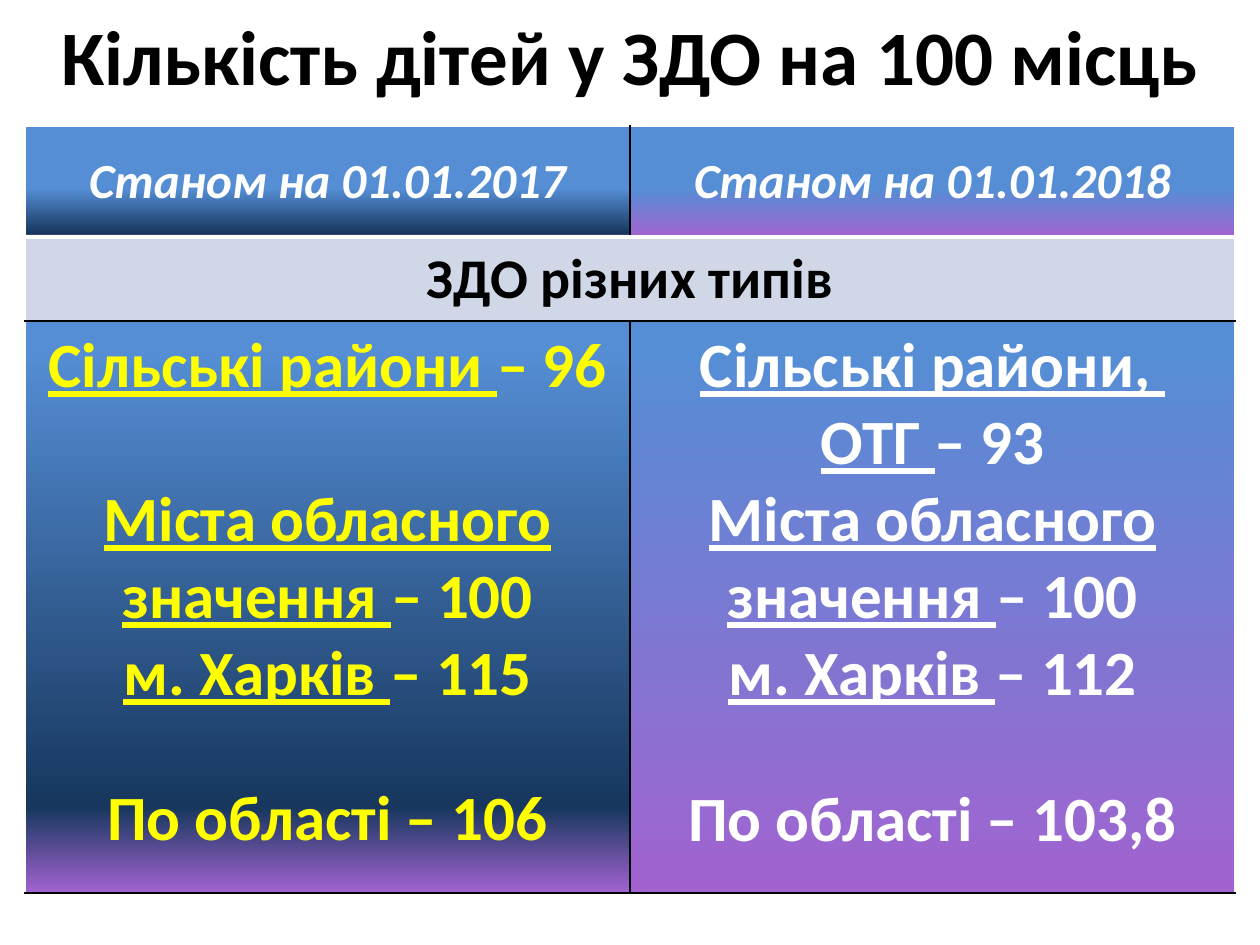
"""Build the slide comparing children per 100 preschool places in 2017 and 2018."""
from dataclasses import dataclass
from typing import NamedTuple

from lxml import etree
from pptx import Presentation
from pptx.dml.color import RGBColor
from pptx.enum.text import MSO_ANCHOR, PP_ALIGN
from pptx.oxml.ns import qn
from pptx.util import Emu, Pt

CENTER = PP_ALIGN.CENTER
MIDDLE, TOP = MSO_ANCHOR.MIDDLE, MSO_ANCHOR.TOP
EMU_PER_PX = 914400 / 126


@dataclass(frozen=True)
class Theme:
    font: str = "Calibri"
    black: str = "000000"
    white: str = "FFFFFF"
    yellow: str = "FFFF00"
    sky: str = "558ED5"
    navy: str = "17375E"
    violet: str = "A263D0"
    band: str = "D0D8E8"
    title_size: int = 44
    header_size: int = 28
    band_size: int = 32
    body_size: int = 36


THEME = Theme()


class Line(NamedTuple):
    label: str = ""
    value: str = ""
    space_before: int = 0


class Stop(NamedTuple):
    percent: int
    color: str


class Border(NamedTuple):
    color: str
    points: int


class CellSpec(NamedTuple):
    row: int
    column: int
    lines: list[Line]
    size: int
    color: str
    stops: list[Stop]
    anchor: MSO_ANCHOR = MIDDLE
    italic: bool = False


THIN_WHITE, THICK_WHITE = Border(THEME.white, 1), Border(THEME.white, 3)
THIN_BLACK = Border(THEME.black, 1)
ROW_RULES = [THIN_WHITE, THICK_WHITE, THIN_BLACK, THIN_BLACK]
COLUMN_RULES = [THIN_WHITE, THIN_BLACK, THIN_WHITE]
ROW_HEIGHTS = [111, 84, 572]
COLUMN_WIDTHS = [605, 605]
BAND_ROW = 1

CELLS = [
    CellSpec(0, 0, [Line(value="Станом на 01.01.2017")], THEME.header_size, THEME.white,
             [Stop(0, THEME.sky), Stop(56, THEME.sky), Stop(97, THEME.navy), Stop(100, THEME.violet)],
             italic=True),
    CellSpec(0, 1, [Line(value="Станом на 01.01.2018")], THEME.header_size, THEME.white,
             [Stop(0, THEME.sky), Stop(56, THEME.sky), Stop(100, THEME.violet)], italic=True),
    CellSpec(BAND_ROW, 0, [Line(value="ЗДО різних типів")], THEME.band_size, THEME.black,
             [Stop(0, THEME.band)]),
    CellSpec(2, 0, [
        Line("Сільські райони ", "– 96"),
        Line("Міста обласного значення ", "– 100", 44),
        Line("м. Харків ", "– 115"),
        Line(value="По області – 106", space_before=39),
    ], THEME.body_size, THEME.yellow,
        [Stop(0, THEME.sky), Stop(5, THEME.sky), Stop(85, THEME.navy), Stop(100, THEME.violet)], TOP),
    CellSpec(2, 1, [
        Line("Сільські райони, "),
        Line("ОТГ ", "– 93"),
        Line("Міста обласного значення ", "– 100"),
        Line("м. Харків ", "– 112"),
        Line(value="По області – 103,8", space_before=39),
    ], THEME.body_size, THEME.white,
        [Stop(0, THEME.sky), Stop(5, THEME.sky), Stop(100, THEME.violet)], TOP),
]


def px(length: int) -> Emu:
    """Convert pixels to EMU."""
    return Emu(round(length * EMU_PER_PX))


def write_lines(text_frame, lines: list[Line], size: int, color: str, italic: bool = False) -> None:
    """Write centred bold lines with underlined labels."""
    for index, line in enumerate(lines):
        paragraph = text_frame.paragraphs[0] if index == 0 else text_frame.add_paragraph()
        paragraph.alignment = CENTER
        if line.space_before:
            paragraph.space_before = Pt(line.space_before)
        for text, underline in ((line.label, True), (line.value, False)):
            if not text:
                continue
            run = paragraph.add_run()
            run.text = text
            formats = {"name": THEME.font, "size": Pt(size), "bold": True,
                       "italic": italic, "underline": underline}
            for name, value in formats.items():
                setattr(run.font, name, value)
            run.font.color.rgb = RGBColor.from_string(color)


def add_solid(parent, color: str) -> None:
    """Append a solid fill element."""
    fill = etree.SubElement(parent, qn("a:solidFill"))
    etree.SubElement(fill, qn("a:srgbClr"), val=color)


def set_borders(cell, row: int, column: int) -> None:
    """Draw the four borders that the grid rules give a cell."""
    vertical = [THIN_WHITE] * 3 if row == BAND_ROW else COLUMN_RULES
    borders = {"a:lnL": vertical[column], "a:lnR": vertical[column + 1],
               "a:lnT": ROW_RULES[row], "a:lnB": ROW_RULES[row + 1]}
    properties = cell._tc.get_or_add_tcPr()
    for tag, border in borders.items():
        line = etree.SubElement(properties, qn(tag), w=str(Pt(border.points)))
        add_solid(line, border.color)


def set_fill(cell, stops: list[Stop]) -> None:
    """Fill a cell with one colour or a downward gradient."""
    properties = cell._tc.get_or_add_tcPr()
    if len(stops) == 1:
        add_solid(properties, stops[0].color)
        return
    gradient = etree.SubElement(properties, qn("a:gradFill"), rotWithShape="1")
    stop_list = etree.SubElement(gradient, qn("a:gsLst"))
    for stop in stops:
        element = etree.SubElement(stop_list, qn("a:gs"), pos=str(stop.percent * 1000))
        etree.SubElement(element, qn("a:srgbClr"), val=stop.color)
    etree.SubElement(gradient, qn("a:lin"), ang="5400000", scaled="0")


def add_title(slide) -> None:
    """Add the slide heading."""
    shape = slide.shapes.add_textbox(px(25), px(16), px(1211), px(78))
    shape.text_frame.word_wrap = True
    shape.text_frame.vertical_anchor = MIDDLE
    write_lines(shape.text_frame, [Line(value="Кількість дітей у ЗДО на 100 місць")],
                THEME.title_size, THEME.black)


def add_comparison_table(slide) -> None:
    """Add the table comparing both years."""
    table = slide.shapes.add_table(len(ROW_HEIGHTS), len(COLUMN_WIDTHS), px(25), px(126),
                                   px(sum(COLUMN_WIDTHS)), px(sum(ROW_HEIGHTS))).table
    for name, value in {"first_row": False, "horz_banding": False}.items():
        setattr(table, name, value)
    for row, height in zip(table.rows, ROW_HEIGHTS):
        row.height = px(height)
    for column, width in zip(table.columns, COLUMN_WIDTHS):
        column.width = px(width)
    table.cell(BAND_ROW, 0).merge(table.cell(BAND_ROW, 1))
    for spec in CELLS:
        cell = table.cell(spec.row, spec.column)
        cell.vertical_anchor = spec.anchor
        set_borders(cell, spec.row, spec.column)
        set_fill(cell, spec.stops)
        write_lines(cell.text_frame, spec.lines, spec.size, spec.color, spec.italic)
    set_borders(table.cell(BAND_ROW, 1), BAND_ROW, 1)


def main() -> None:
    """Create and save the presentation."""
    presentation = Presentation()
    presentation.slide_width, presentation.slide_height = px(1260), px(945)
    slide = presentation.slides.add_slide(presentation.slide_layouts[6])
    add_title(slide)
    add_comparison_table(slide)
    presentation.save("out.pptx")


if __name__ == "__main__":
    main()
